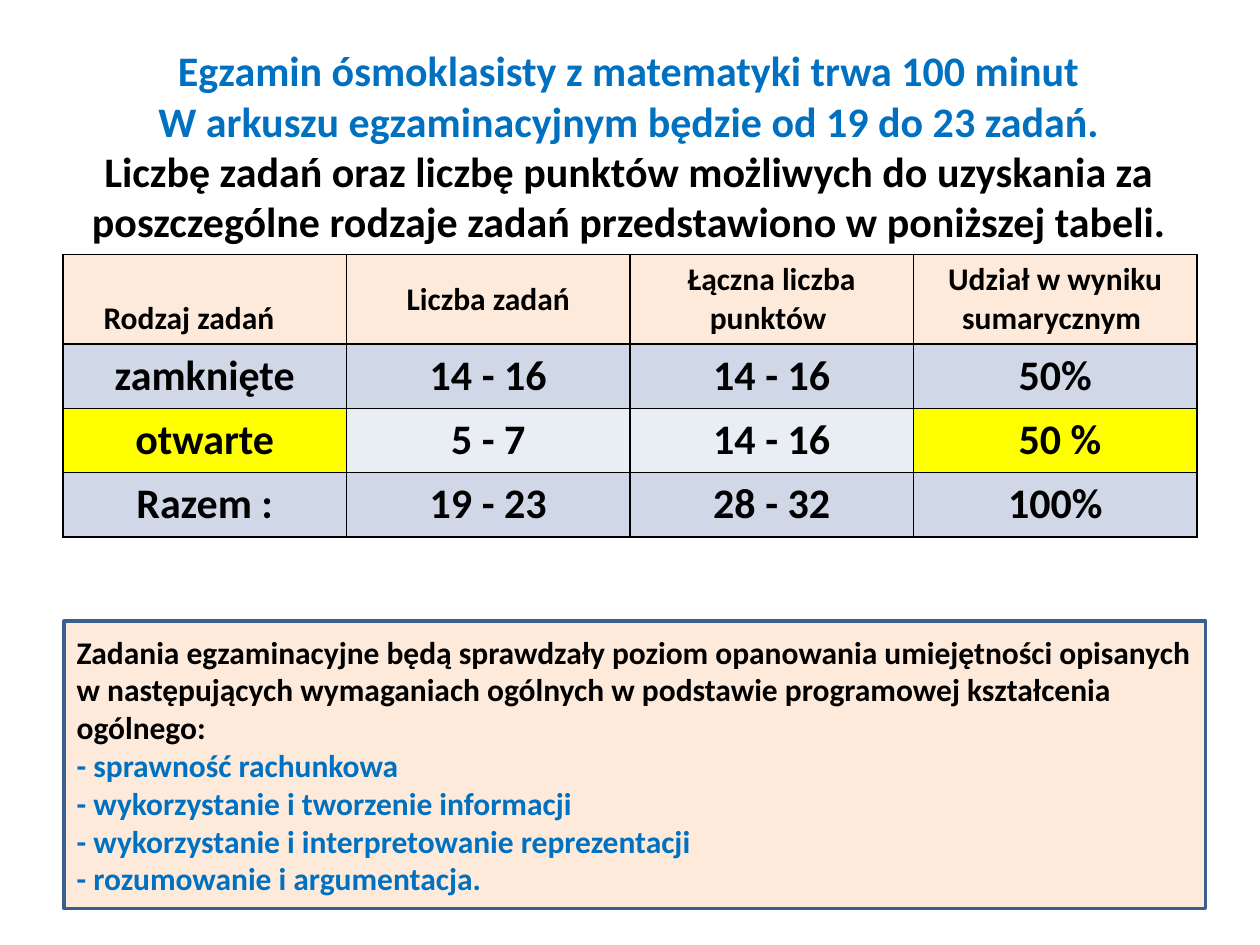
from lxml import etree
from pptx import Presentation
from pptx.dml.color import RGBColor
from pptx.enum.shapes import MSO_SHAPE
from pptx.enum.text import MSO_ANCHOR, MSO_AUTO_SIZE, PP_ALIGN
from pptx.oxml.ns import qn
from pptx.util import Inches, Pt

RECT = MSO_SHAPE.RECTANGLE
MIDDLE, BOTTOM = MSO_ANCHOR.MIDDLE, MSO_ANCHOR.BOTTOM
LEFT, CENTER = PP_ALIGN.LEFT, PP_ALIGN.CENTER
NO_FIT = MSO_AUTO_SIZE.NONE

BLACK, BLUE, PEACH, YELLOW = "000000", "0070C0", "FDEADA", "FFFF00"
BAND_DARK, BAND_LIGHT, BOX_LINE = "D0D8E8", "E9EDF4", "3A5F8C"

TITLE = [
    ("Egzamin ósmoklasisty z matematyki trwa 100 minut", BLUE),
    ("W arkuszu egzaminacyjnym będzie od 19 do 23 zadań.", BLUE),
    ("Liczbę zadań oraz liczbę punktów możliwych do uzyskania za "
     "poszczególne rodzaje zadań przedstawiono w poniższej tabeli.", BLACK),
]
HEADER = ["Rodzaj zadań", "Liczba zadań", "Łączna liczba punktów ",
          "Udział w wyniku sumarycznym "]
ROWS = [
    ["zamknięte", "14 - 16", "14 - 16", "50%"],
    ["otwarte", "5 - 7", "14 - 16", " 50 %"],
    ["Razem :", "19 - 23", "28 - 32", "100%"],
]
HIGHLIGHTED = {(2, 0), (2, 3)}
REQUIREMENTS = [
    ("Zadania egzaminacyjne będą sprawdzały poziom opanowania umiejętności "
     "opisanych w następujących wymaganiach ogólnych w podstawie programowej "
     "kształcenia ogólnego:", BLACK),
    ("- sprawność rachunkowa", BLUE),
    ("- wykorzystanie i tworzenie informacji", BLUE),
    ("- wykorzystanie i interpretowanie reprezentacji", BLUE),
    ("- rozumowanie i argumentacja.", BLUE),
]
HEADER_H, ROW_H = 0.71, 0.51
TABLE_W = 9


def rgb(value):
    return RGBColor.from_string(value)


def paint(target, color):
    target.fill.solid()
    target.fill.fore_color.rgb = rgb(color)


def write(tf, lines, size, align):
    tf.word_wrap = True
    for i, (text, color) in enumerate(lines):
        p = tf.paragraphs[0] if i == 0 else tf.add_paragraph()
        p.text = text
        p.alignment = align
        p.font.name = "Calibri"
        p.font.size = Pt(size)
        p.font.bold = True
        p.font.color.rgb = rgb(color)


def add_borders(cell):
    props = cell._tc.get_or_add_tcPr()
    for i, side in enumerate(("a:lnL", "a:lnR", "a:lnT", "a:lnB")):
        ln = etree.Element(qn(side), w=str(Pt(1)))
        fill = etree.SubElement(ln, qn("a:solidFill"))
        etree.SubElement(fill, qn("a:srgbClr"), val=BLACK)
        props.insert(i, ln)


def cell_color(r, c):
    if r == 0:
        return PEACH
    if (r, c) in HIGHLIGHTED:
        return YELLOW
    return BAND_DARK if r % 2 else BAND_LIGHT


def add_title(s):
    sp = s.shapes.title
    sp.left, sp.top, sp.width, sp.height = map(Inches, (0.49, 0.21, 9, 1.89))
    tf = sp.text_frame
    tf.auto_size = NO_FIT
    tf.vertical_anchor = MIDDLE
    write(tf, TITLE, 24, CENTER)


def add_results_table(s):
    data = [HEADER] + ROWS
    height = HEADER_H + ROW_H * len(ROWS)
    table = s.shapes.add_table(len(data), len(HEADER), Inches(0.5), Inches(2.02),
                               Inches(TABLE_W), Inches(height)).table
    for column in table.columns:
        column.width = Inches(TABLE_W / len(HEADER))
    for r, values in enumerate(data):
        table.rows[r].height = Inches(ROW_H if r else HEADER_H)
        for c, text in enumerate(values):
            cell = table.cell(r, c)
            paint(cell, cell_color(r, c))
            add_borders(cell)
            cell.vertical_anchor = MIDDLE
            write(cell.text_frame, [(text, BLACK)], 24 if r else 18, CENTER)
    corner = table.cell(0, 0)
    corner.vertical_anchor = BOTTOM
    corner.margin_right = Inches(0.35)


def add_requirements(s):
    sp = s.shapes.add_shape(RECT, *map(Inches, (0.51, 4.93, 9.06, 2.28)))
    sp.shadow.inherit = False
    paint(sp, PEACH)
    sp.line.color.rgb = rgb(BOX_LINE)
    sp.line.width = Pt(2)
    sp.text_frame.vertical_anchor = MIDDLE
    write(sp.text_frame, REQUIREMENTS, 18, LEFT)


def main():
    prs = Presentation()
    prs.slide_width, prs.slide_height = Inches(10), Inches(7.5)
    s = prs.slides.add_slide(prs.slide_layouts[5])
    add_title(s)
    add_results_table(s)
    add_requirements(s)
    prs.save("out.pptx")


if __name__ == "__main__":
    main()
